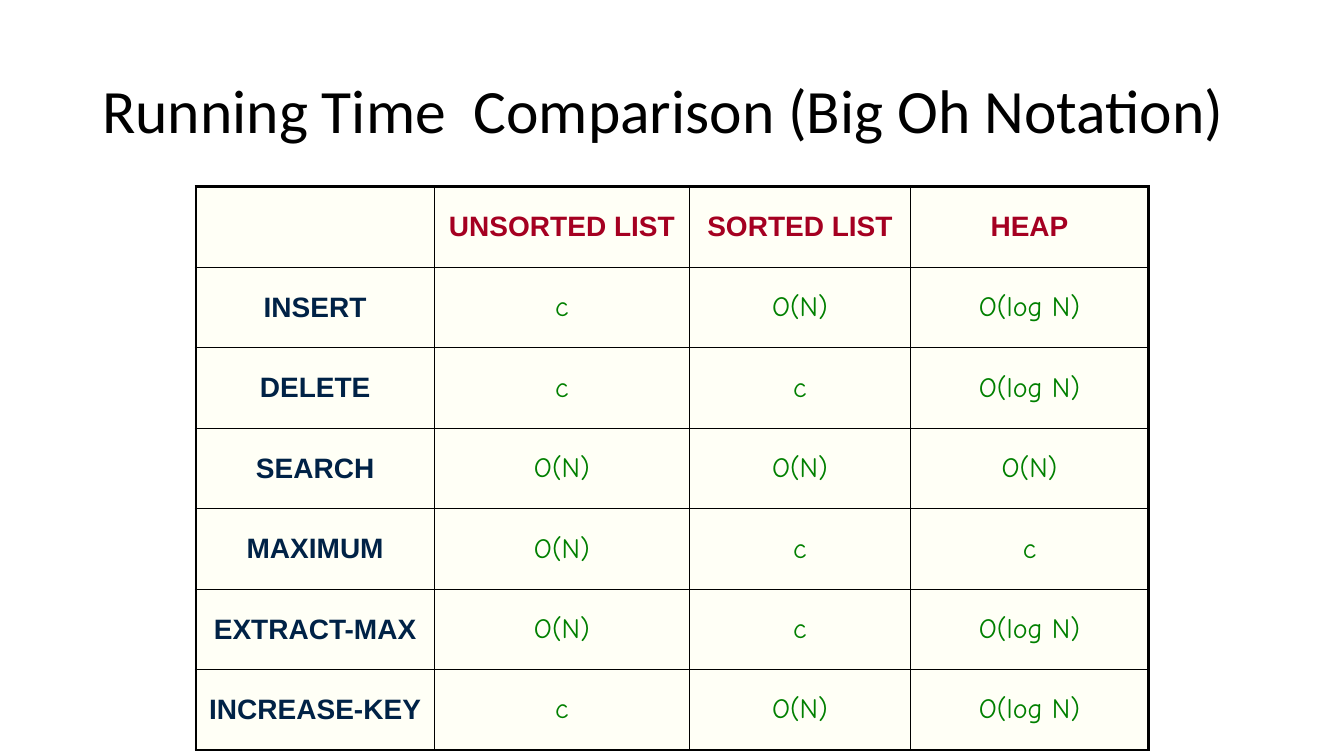
from lxml import etree
from pptx import Presentation
from pptx.dml.color import RGBColor
from pptx.enum.text import MSO_ANCHOR, PP_ALIGN
from pptx.oxml.ns import qn
from pptx.util import Pt

MIDDLE, CENTER, LEFT = MSO_ANCHOR.MIDDLE, PP_ALIGN.CENTER, PP_ALIGN.LEFT

TITLE = "Running Time  Comparison (Big Oh Notation)"
ROWS = [
    ("", "UNSORTED LIST", "SORTED LIST", "HEAP"),
    ("INSERT", "c", "O(N)", "O(log N)"),
    ("DELETE", "c", "c", "O(log N)"),
    ("SEARCH", "O(N)", "O(N)", "O(N)"),
    ("MAXIMUM", "O(N)", "c", "c"),
    ("EXTRACT-MAX", "O(N)", "c", "O(log N)"),
    ("INCREASE-KEY", "c", "O(N)", "O(log N)"),
]
COL_WIDTHS = [170.2, 182.4, 157.7, 170.2]
ROW_HEIGHT = 57.5
TABLE_LEFT, TABLE_TOP = 140, 133.4
INNER, OUTER = 1, 2.25
CELL_FILL, CELL_ALPHA = "FFFFCC", 16
TITLE_FONT = dict(name="Calibri", size=Pt(44), bold=False, color="000000")
HEADER_FONT = dict(name="Arial", size=Pt(20), bold=True, color="A50021")
LABEL_FONT = {**HEADER_FONT, "color": "002246"}
VALUE_FONT = dict(name="Comic Neue", size=Pt(20), bold=False, color="008000")


def rgb(value):
    return RGBColor.from_string(value)


def write(tf, text, formats, align):
    p = tf.paragraphs[0]
    p.alignment = align
    if text:
        r = p.add_run()
        r.text = text
        for key, value in formats.items():
            if key == "color":
                r.font.color.rgb = rgb(value)
            else:
                setattr(r.font, key, value)
    return p


def fill_cell(cell):
    cell.fill.solid()
    cell.fill.fore_color.rgb = rgb(CELL_FILL)
    color = next(cell._tc.tcPr.iter(qn("a:srgbClr")))
    etree.SubElement(color, qn("a:alpha"), val=str(CELL_ALPHA * 1000))


def border_cell(cell, outer_edges):
    for i, (side, outer) in enumerate(outer_edges.items()):
        width = OUTER if outer else INNER
        ln = etree.Element(qn("a:ln" + side), w=str(Pt(width)))
        fill = etree.SubElement(ln, qn("a:solidFill"))
        etree.SubElement(fill, qn("a:srgbClr"), val="000000")
        cell._tc.tcPr.insert(i, ln)


prs = Presentation()
prs.slide_width, prs.slide_height = Pt(960), Pt(540)
s = prs.slides.add_slide(prs.slide_layouts[6])

tf = s.shapes.add_textbox(Pt(66), Pt(28.8), Pt(828), Pt(104.4)).text_frame
tf.word_wrap = True
tf.vertical_anchor = MIDDLE
write(tf, TITLE, TITLE_FONT, LEFT).line_spacing = 0.9

last_row, last_col = len(ROWS) - 1, len(COL_WIDTHS) - 1
table = s.shapes.add_table(
    len(ROWS), len(COL_WIDTHS), Pt(TABLE_LEFT), Pt(TABLE_TOP),
    Pt(sum(COL_WIDTHS)), Pt(ROW_HEIGHT * len(ROWS))).table
table.first_row = table.horz_banding = False
for column, width in zip(table.columns, COL_WIDTHS):
    column.width = Pt(width)
for i, row in enumerate(ROWS):
    table.rows[i].height = Pt(ROW_HEIGHT)
    for j, text in enumerate(row):
        cell = table.cell(i, j)
        cell.vertical_anchor = MIDDLE
        formats = HEADER_FONT if i == 0 else LABEL_FONT if j == 0 else VALUE_FONT
        write(cell.text_frame, text, formats, CENTER)
        fill_cell(cell)
        border_cell(cell, dict(L=j == 0, R=j == last_col, T=i == 0, B=i == last_row))

prs.save("out.pptx")
